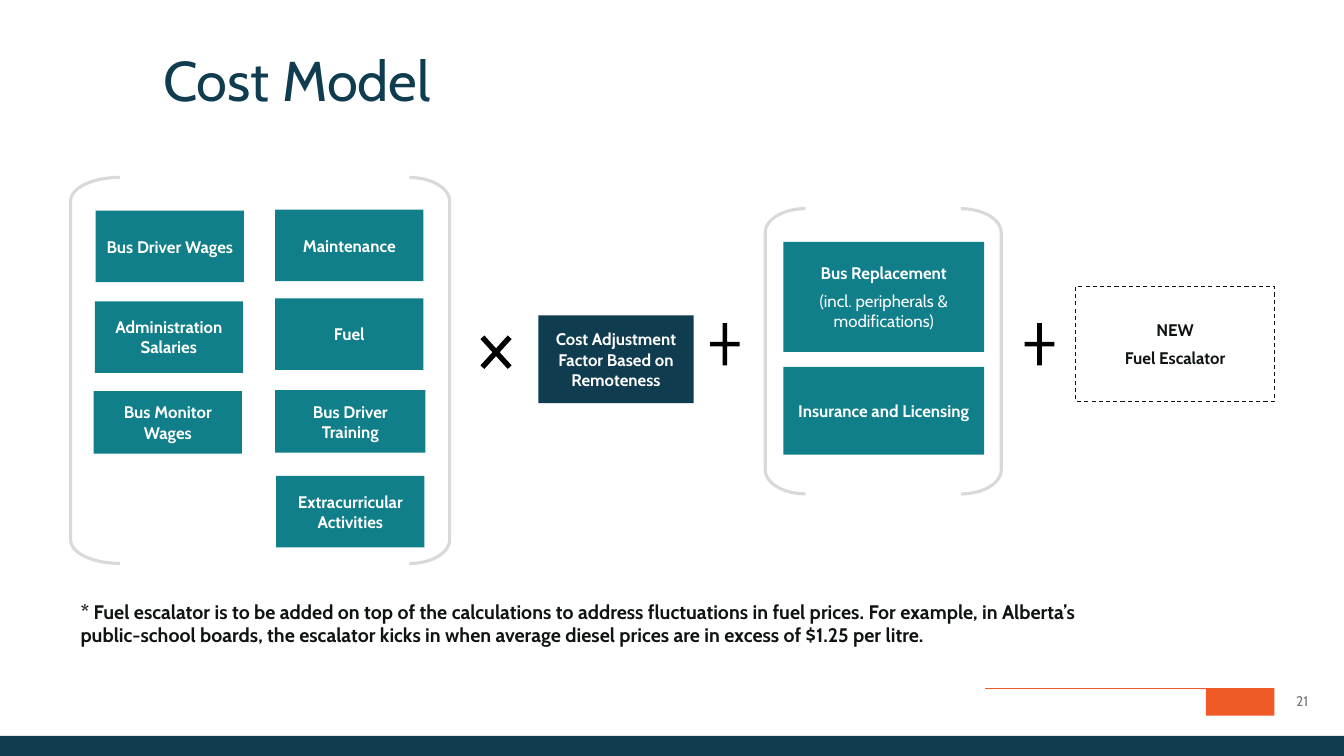
"""Build the Cost Model slide."""
from dataclasses import dataclass
from typing import Optional

import lxml.etree
import pptx
import pptx.dml.color
import pptx.enum.dml
import pptx.enum.shapes
import pptx.enum.text
import pptx.oxml.ns
import pptx.util

Inches = pptx.util.Inches
Pt = pptx.util.Pt
Shape = pptx.enum.shapes.MSO_SHAPE
Align = pptx.enum.text.PP_ALIGN
Anchor = pptx.enum.text.MSO_ANCHOR

FONT = "Cabin"
TEAL, NAVY, ORANGE = "107F8A", "0F3C4F", "EF5A27"
INK, WHITE, BLACK = "0F1313", "FFFFFF", "000000"
BRACKET_GRAY, NUMBER_GRAY = "D9D9D9", "797979"


@dataclass
class Place:
    left: float
    top: float
    width: float
    height: float

    def lengths(self) -> list:
        return [Inches(n) for n in (self.left, self.top, self.width, self.height)]


@dataclass
class CostBox:
    place: Place
    text: str
    fill: Optional[str] = TEAL
    color: str = WHITE
    plain_paragraph: Optional[int] = None


@dataclass
class Symbol:
    kind: Shape
    place: Place
    adjustment: float


@dataclass
class Bracket:
    place: Place
    adjustment: float
    rotation: int = 0


@dataclass
class Label:
    place: Place
    text: str
    size: float
    color: str
    bold: bool = False
    align: Align = Align.LEFT
    anchor: Anchor = Anchor.TOP
    insets: tuple = (0, 0.05)
    line_spacing: Optional[float] = None


COST_BOXES = [
    CostBox(Place(0.95, 2.09, 1.47, 0.71), "Bus Driver Wages"),
    CostBox(Place(0.94, 2.99, 1.47, 0.71), "Administration Salaries"),
    CostBox(Place(0.93, 3.88, 1.47, 0.62), "Bus Monitor Wages"),
    CostBox(Place(2.73, 2.08, 1.47, 0.71), "Maintenance"),
    CostBox(Place(2.73, 2.96, 1.47, 0.71), "Fuel"),
    CostBox(Place(2.73, 3.87, 1.49, 0.62), "Bus Driver Training"),
    CostBox(Place(2.74, 4.72, 1.47, 0.71), "Extracurricular Activities"),
    CostBox(Place(5.34, 3.13, 1.54, 0.87), "Cost Adjustment Factor Based on Remoteness", NAVY),
    CostBox(Place(7.77, 2.4, 1.99, 1.09),
            "Bus Replacement\n(incl. peripherals & modifications)", plain_paragraph=1),
    CostBox(Place(7.77, 3.64, 1.99, 0.87), "Insurance and Licensing"),
    CostBox(Place(10.67, 2.84, 1.97, 1.14), "NEW\nFuel Escalator", None, INK),
]

SYMBOLS = [
    Symbol(Shape.MATH_MULTIPLY, Place(4.66, 3.21, 0.52, 0.57), 0.101),
    Symbol(Shape.MATH_PLUS, Place(6.99, 3.13, 0.4, 0.57), 0.116),
    Symbol(Shape.MATH_PLUS, Place(10.11, 3.13, 0.4, 0.57), 0.116),
]

BRACKETS = [
    Bracket(Place(0.7, 1.76, 0.49, 3.83), 0.474),
    Bracket(Place(4.06, 1.76, 0.4, 3.83), 0.594, 180),
    Bracket(Place(7.59, 2.07, 0.4, 2.83), 0.594),
    Bracket(Place(9.53, 2.07, 0.4, 2.83), 0.594, 180),
]

LABELS = [
    Label(Place(1.62, 0.53, 9.86, 0.61), "Cost Model", 40, NAVY,
          insets=(0, 0), line_spacing=0.9),
    Label(Place(0.7, 5.9, 10.11, 0.57),
          "* Fuel escalator is to be added on top of the calculations to address "
          "fluctuations in fuel prices. For example, in Alberta’s public-school boards, "
          "the escalator kicks in when average diesel prices are in excess of $1.25 per litre.",
          14, INK, True, insets=(0.1, 0.05)),
    Label(Place(12.64, 6.82, 0.55, 0.27), "21", 10, NUMBER_GRAY,
          align=Align.CENTER, anchor=Anchor.MIDDLE),
]


def rgb(color: str) -> pptx.dml.color.RGBColor:
    return pptx.dml.color.RGBColor.from_string(color)


def style_font(font, size: float, color: str, bold: bool) -> None:
    font.name = FONT
    font.size = Pt(size)
    font.bold = bold
    font.color.rgb = rgb(color)


def add_shape(page, kind: Shape, place: Place, fill: Optional[str] = None):
    shape = page.shapes.add_shape(kind, *place.lengths())
    shape.shadow.inherit = False
    shape.line.fill.background()
    if fill:
        shape.fill.solid()
        shape.fill.fore_color.rgb = rgb(fill)
    else:
        shape.fill.background()
    return shape


def add_cost_box(page, item: CostBox) -> None:
    box = add_shape(page, Shape.RECTANGLE, item.place, item.fill)
    if not item.fill:
        box.line.color.rgb = rgb(INK)
        box.line.width = Pt(0.75)
        box.line.dash_style = pptx.enum.dml.MSO_LINE.DASH
    frame = box.text_frame
    frame.word_wrap = True
    frame.vertical_anchor = Anchor.MIDDLE
    frame.text = item.text
    for index, para in enumerate(frame.paragraphs):
        para.alignment = Align.CENTER
        para.space_before = Pt(3 if index else 0)
        para.space_after = Pt(3)
        for span in para.runs:
            style_font(span.font, 12, item.color, index != item.plain_paragraph)


def add_symbol(page, symbol: Symbol) -> None:
    shape = add_shape(page, symbol.kind, symbol.place, BLACK)
    shape.adjustments[0] = symbol.adjustment


def add_bracket(page, bracket: Bracket) -> None:
    shape = add_shape(page, Shape.LEFT_BRACKET, bracket.place)
    shape.adjustments[0] = bracket.adjustment
    shape.rotation = bracket.rotation
    shape.line.color.rgb = rgb(BRACKET_GRAY)
    shape.line.width = Pt(2.25)


def add_label(page, label: Label) -> None:
    frame = page.shapes.add_textbox(*label.place.lengths()).text_frame
    frame.word_wrap = True
    frame.vertical_anchor = label.anchor
    frame.margin_left = frame.margin_right = Inches(label.insets[0])
    frame.margin_top = frame.margin_bottom = Inches(label.insets[1])
    frame.text = label.text
    para = frame.paragraphs[0]
    para.alignment = label.align
    para.line_spacing = label.line_spacing
    style_font(para.runs[0].font, label.size, label.color, label.bold)


def add_footer(page) -> None:
    add_shape(page, Shape.RECTANGLE, Place(11.96, 6.83, 0.68, 0.27), ORANGE)
    add_shape(page, Shape.RECTANGLE, Place(0, 7.3, 13.33, 0.2), NAVY)
    rule = page.shapes.add_connector(pptx.enum.shapes.MSO_CONNECTOR.STRAIGHT,
                                     Inches(9.77), Inches(6.83), Inches(12.64), Inches(6.83))
    rule.line.color.rgb = rgb(ORANGE)
    rule.line.width = Pt(1)
    properties = rule._element.find(pptx.oxml.ns.qn("p:spPr"))
    lxml.etree.SubElement(properties, pptx.oxml.ns.qn("a:effectLst"))


def main() -> None:
    deck = pptx.Presentation()
    deck.slide_width, deck.slide_height = Inches(13.33), Inches(7.5)
    page = deck.slides.add_slide(deck.slide_layouts[6])
    add_footer(page)
    for item in COST_BOXES:
        add_cost_box(page, item)
    for symbol in SYMBOLS:
        add_symbol(page, symbol)
    for bracket in BRACKETS:
        add_bracket(page, bracket)
    for label in LABELS:
        add_label(page, label)
    deck.save("out.pptx")


if __name__ == "__main__":
    main()
